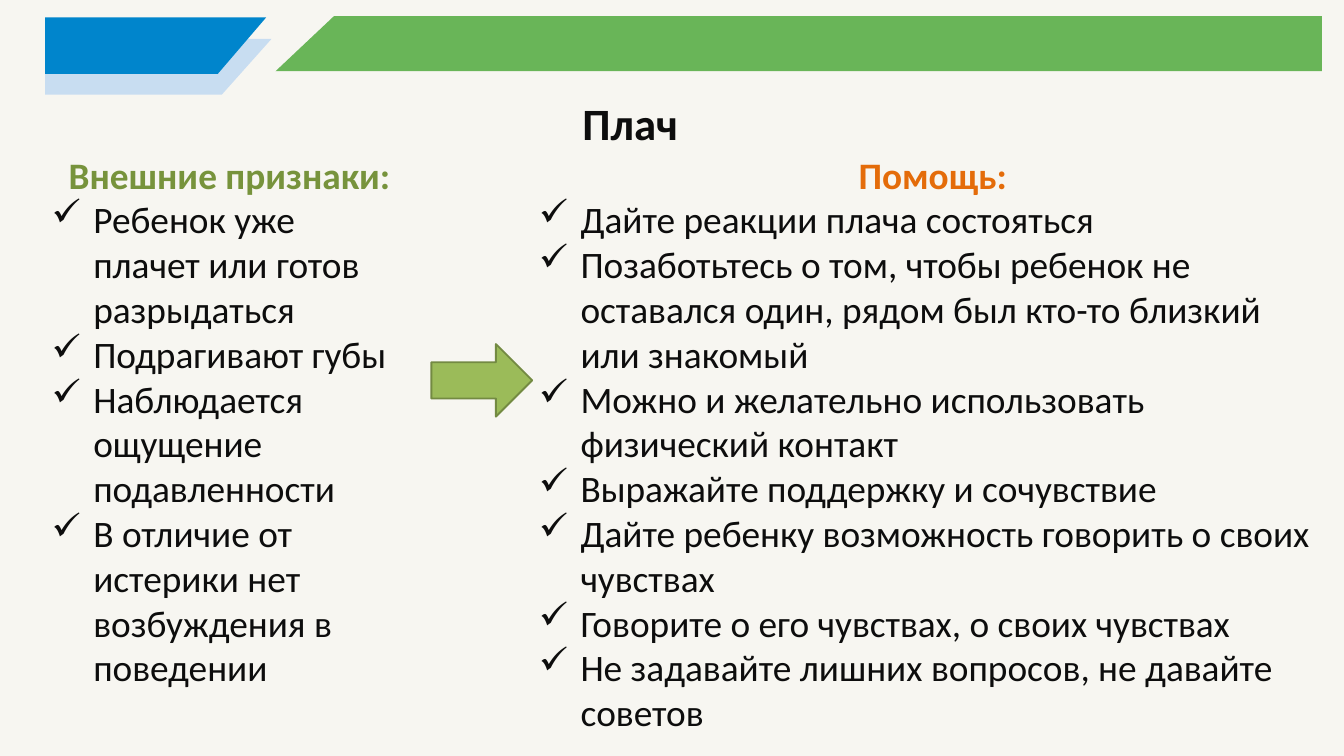
from lxml import etree
from pptx import Presentation
from pptx import util as u
from pptx.dml.color import RGBColor
from pptx.enum import shapes, text
from pptx.oxml.ns import qn

# The slide is a grid of 20 columns and 11.25 rows
COLUMNS, ROWS = 20, 11.25
CELL = u.Inches(1)
LEFT_EDGE = 0.67
LIST_TOP = 2.21
INDENT = 0.62

COLORS = {
    "paper": "F7F6F1",
    "pale blue": "C8DDF1",
    "blue": "0085CC",
    "green": "69B558",
    "signs": "77933C",
    "help": "E46C0A",
    "ink": "0D0D0D",
    "arrow": "9BBB59",
    "arrow line": "738A42",
}

SIGNS = [
    "Ребенок уже плачет или готов разрыдаться",
    "Подрагивают губы",
    "Наблюдается ощущение подавленности",
    "В отличие от истерики нет возбуждения в поведении",
]
HELP = [
    "Дайте реакции плача состояться",
    "Позаботьтесь о том, чтобы ребенок не оставался один, рядом был кто-то близкий или знакомый",
    "Можно и желательно использовать физический контакт",
    "Выражайте поддержку и сочувствие",
    "Дайте ребенку возможность говорить о своих чувствах",
    "Говорите о его чувствах, о своих чувствах",
    "Не задавайте лишних вопросов, не давайте советов",
]


def cells(*counts):
    return [u.Emu(round(count * CELL)) for count in counts]


def color(name):
    return RGBColor.from_string(COLORS[name])


def set_format(target, values):
    for name, value in values.items():
        setattr(target, name, value)


def paint(shape, fill):
    shape.shadow.inherit = False
    shape.fill.solid()
    shape.fill.fore_color.rgb = color(fill)
    shape.line.fill.background()


def add_band(slide, corners, fill):
    points = [cells(*corner) for corner in corners]
    builder = slide.shapes.build_freeform(*points[0], scale=1)
    builder.add_line_segments(points[1:], close=True)
    paint(builder.convert_to_shape(), fill)


def add_text_box(slide, place, values):
    frame = slide.shapes.add_textbox(*cells(*place)).text_frame
    set_format(frame, {"word_wrap": True, **values})
    return frame


def write(paragraph, words, size, ink, bold=False):
    run = paragraph.add_run()
    run.text = words
    set_format(run.font, {"name": "Calibri", "size": u.Pt(size), "bold": bold})
    run.font.color.rgb = color(ink)


def add_check_mark(paragraph):
    properties = paragraph._p.get_or_add_pPr()
    (indent,) = cells(INDENT)
    properties.set("marL", str(indent))
    properties.set("indent", str(-indent))
    etree.SubElement(properties, qn("a:buChar")).set("char", "✓")


def add_check_list(slide, place, heading, heading_color, items):
    frame = add_text_box(slide, place, {"auto_size": text.MSO_AUTO_SIZE.SHAPE_TO_FIT_TEXT})
    first = frame.paragraphs[0]
    first.alignment = text.PP_ALIGN.CENTER
    write(first, heading, 40, heading_color, bold=True)
    for item in items:
        paragraph = frame.add_paragraph()
        add_check_mark(paragraph)
        write(paragraph, item, 40, "ink")


def add_title(slide, place, words):
    margins = dict.fromkeys(
        ("margin_left", "margin_top", "margin_right", "margin_bottom"), u.Inches(0.13))
    frame = add_text_box(slide, place, {"vertical_anchor": text.MSO_ANCHOR.BOTTOM, **margins})
    paragraph = frame.paragraphs[0]
    set_format(paragraph, {"alignment": text.PP_ALIGN.CENTER, "line_spacing": 0.9})
    write(paragraph, words, 48, "ink", bold=True)


def add_arrow(slide, place):
    arrow = slide.shapes.add_shape(shapes.MSO_SHAPE.RIGHT_ARROW, *cells(*place))
    paint(arrow, "arrow")
    arrow.line.color.rgb = color("arrow line")
    arrow.line.width = u.Pt(2)


def main():
    presentation = Presentation()
    presentation.slide_width, presentation.slide_height = cells(COLUMNS, ROWS)
    slide = presentation.slides.add_slide(presentation.slide_layouts[6])
    slide.background.fill.solid()
    slide.background.fill.fore_color.rgb = color("paper")

    # Slanted header bands
    add_band(slide, [(4.04, 0.58), (LEFT_EDGE, 0.58), (LEFT_EDGE, 1.41), (3.3, 1.41)], "pale blue")
    add_band(slide, [(3.96, 0.26), (LEFT_EDGE, 0.26), (LEFT_EDGE, 1.1), (3.24, 1.1)], "blue")
    add_band(slide, [(19.67, 0.24), (4.97, 0.24), (4.1, 1.06), (19.67, 1.06)], "green")

    # Signs, title and help
    add_check_list(slide, (LEFT_EDGE, LIST_TOP, 5.49, 11.17), "Внешние признаки:", "signs", SIGNS)
    add_title(slide, (3.93, 1.39, 11.05, 0.97), "Плач ")
    add_check_list(slide, (7.92, LIST_TOP, 11.92, 12.22), "Помощь:", "help", HELP)

    # Arrow from signs to help
    add_arrow(slide, (6.42, 5.12, 1.5, 1.08))

    presentation.save("out.pptx")


if __name__ == "__main__":
    main()
